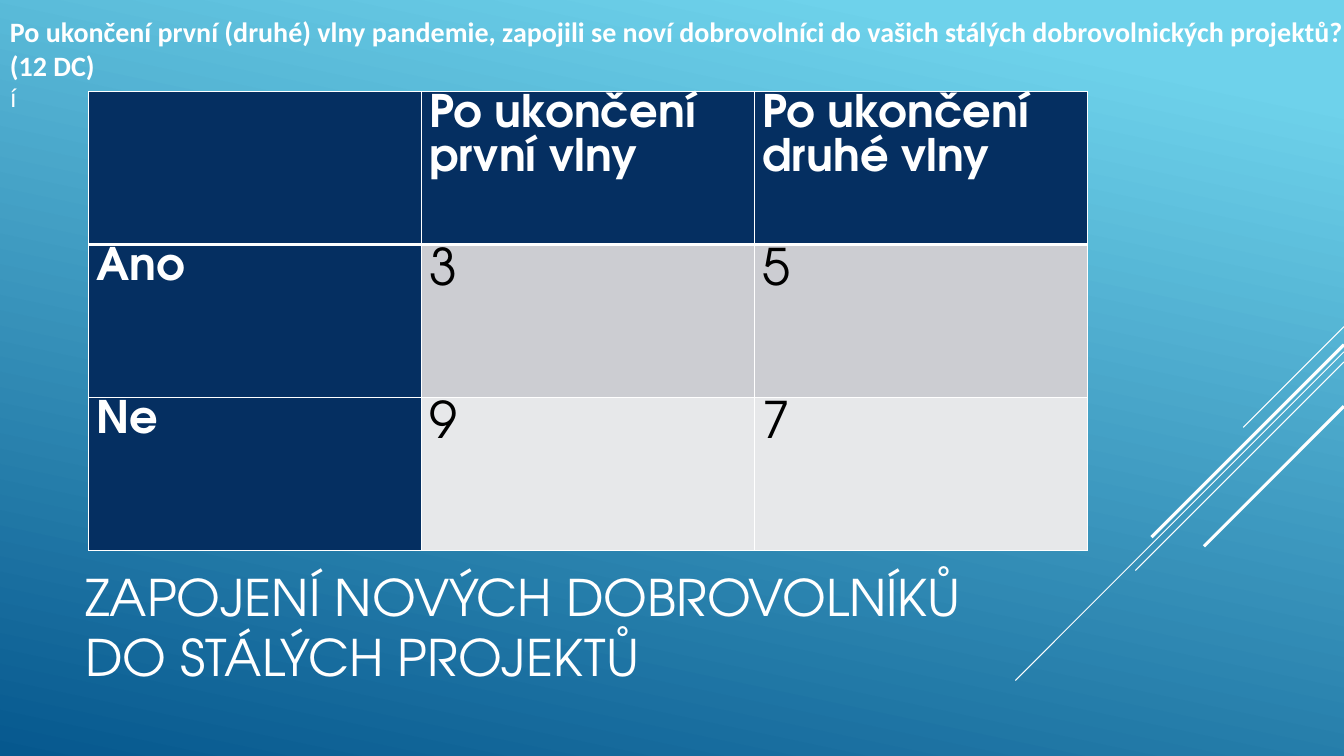
from dataclasses import dataclass

from lxml import etree
from pptx import Presentation
from pptx import util as u
from pptx.dml import color
from pptx.enum import shapes, text
from pptx.oxml import ns

Pt = u.Pt
WHITE, NAVY, BLACK = "FFFFFF", "052F61", "000000"
HEAD = "TeX Gyre Adventor"
WIDE, HIGH = 960, 540


@dataclass
class Ray:
    top: float
    run: float
    weight: float


@dataclass
class Row:
    words: tuple[str, str, str]
    fill: str
    above: float = 1
    below: float = 1


RAYS = [
    Ray(233.3, 72, 0.75),
    Ray(251.3, 234.7, 0.75),
    Ray(258.5, 149, 0.75),
    Ray(246.2, 137.5, 2.25),
    Ray(290.2, 100, 2.25),
]

ROWS = [
    Row(("", "Po ukončení první vlny", "Po ukončení druhé vlny"), NAVY, below=3),
    Row(("Ano", "3", "5"), "CCCDD2", above=3),
    Row(("Ne", "9", "7"), "E7E8EA"),
]


def rgb(code: str) -> color.RGBColor:
    return color.RGBColor.from_string(code)


def write(para, words: str, size: float = 36, font: str = HEAD,
          tint: str = WHITE, bold: bool = False, space: float | None = None) -> None:
    run = para.add_run()
    run.text = words
    run.font.size = Pt(size)
    run.font.name = font
    run.font.bold = bold
    run.font.color.rgb = rgb(tint)
    if space:
        para.line_spacing = space


def add_box(slide, left: float, top: float, width: float, height: float):
    frame = slide.shapes.add_textbox(Pt(left), Pt(top), Pt(width), Pt(height)).text_frame
    frame.word_wrap = True
    frame.vertical_anchor = text.MSO_ANCHOR.MIDDLE
    return frame


def paint(slide) -> None:
    fill = slide.background.fill
    fill.gradient()
    fill.gradient_angle = 258
    for stop, place, code in zip(fill.gradient_stops, (0.1, 1), ("6ED2EB", "06588E")):
        stop.position = place
        stop.color.rgb = rgb(code)


def add_ray(slide, ray: Ray) -> None:
    line = slide.shapes.add_connector(
        shapes.MSO_CONNECTOR.STRAIGHT, Pt(WIDE), Pt(ray.top),
        Pt(WIDE - ray.run), Pt(ray.top + ray.run))
    line.line.color.rgb = rgb(WHITE)
    line.line.width = Pt(ray.weight)
    etree.SubElement(line._element.spPr, ns.qn("a:effectLst"))


def edge(cell, side: str, weight: float) -> None:
    props = cell._tc.get_or_add_tcPr()
    line = etree.SubElement(props, ns.qn(f"a:ln{side}"), w=str(Pt(weight)))
    solid = etree.SubElement(line, ns.qn("a:solidFill"))
    etree.SubElement(solid, ns.qn("a:srgbClr"), val=WHITE)


def add_grid(slide) -> None:
    grid = slide.shapes.add_table(3, 3, Pt(63.4), Pt(65.5), Pt(713.7), Pt(327.6)).table
    grid.horz_banding = False
    for col in grid.columns:
        col.width = Pt(237.9)
    for line, row in zip(grid.rows, ROWS):
        line.height = Pt(109.2)
        for index, (cell, words) in enumerate(zip(line.cells, row.words)):
            label = index == 0 or row.fill == NAVY
            for side, weight in zip("LRTB", (1, 1, row.above, row.below)):
                edge(cell, side, weight)
            cell.fill.solid()
            cell.fill.fore_color.rgb = rgb(NAVY if label else row.fill)
            cell.margin_left = cell.margin_right = Pt(5.4)
            cell.margin_top = cell.margin_bottom = Pt(0)
            if words:
                write(cell.text_frame.paragraphs[0], words, size=32 if label else 36,
                      tint=WHITE if label else BLACK, bold=label, space=1.07)


def main() -> None:
    deck = Presentation()
    deck.slide_width, deck.slide_height = Pt(WIDE), Pt(HIGH)
    slide = deck.slides.add_slide(deck.slide_layouts[6])
    paint(slide)
    for ray in RAYS:
        add_ray(slide, ray)
    title = add_box(slide, 54, 388, 672, 119)
    write(title.paragraphs[0], "ZAPOJENÍ NOVÝCH DOBROVOLNÍKŮ DO STÁLÝCH PROJEKTŮ")
    add_grid(slide)
    ask = add_box(slide, 0, 6.5, 1009.4, 77.8)
    write(ask.paragraphs[0],
          "Po ukončení první (druhé) vlny pandemie, zapojili se noví dobrovolníci "
          "do vašich stálých dobrovolnických projektů?",
          size=20, font="Calibri", bold=True)
    write(ask.add_paragraph(), "(12 DC)", size=20, font="Calibri", bold=True)
    write(ask.add_paragraph(), "í", size=18, font="Arial")
    deck.save("out.pptx")


if __name__ == "__main__":
    main()
